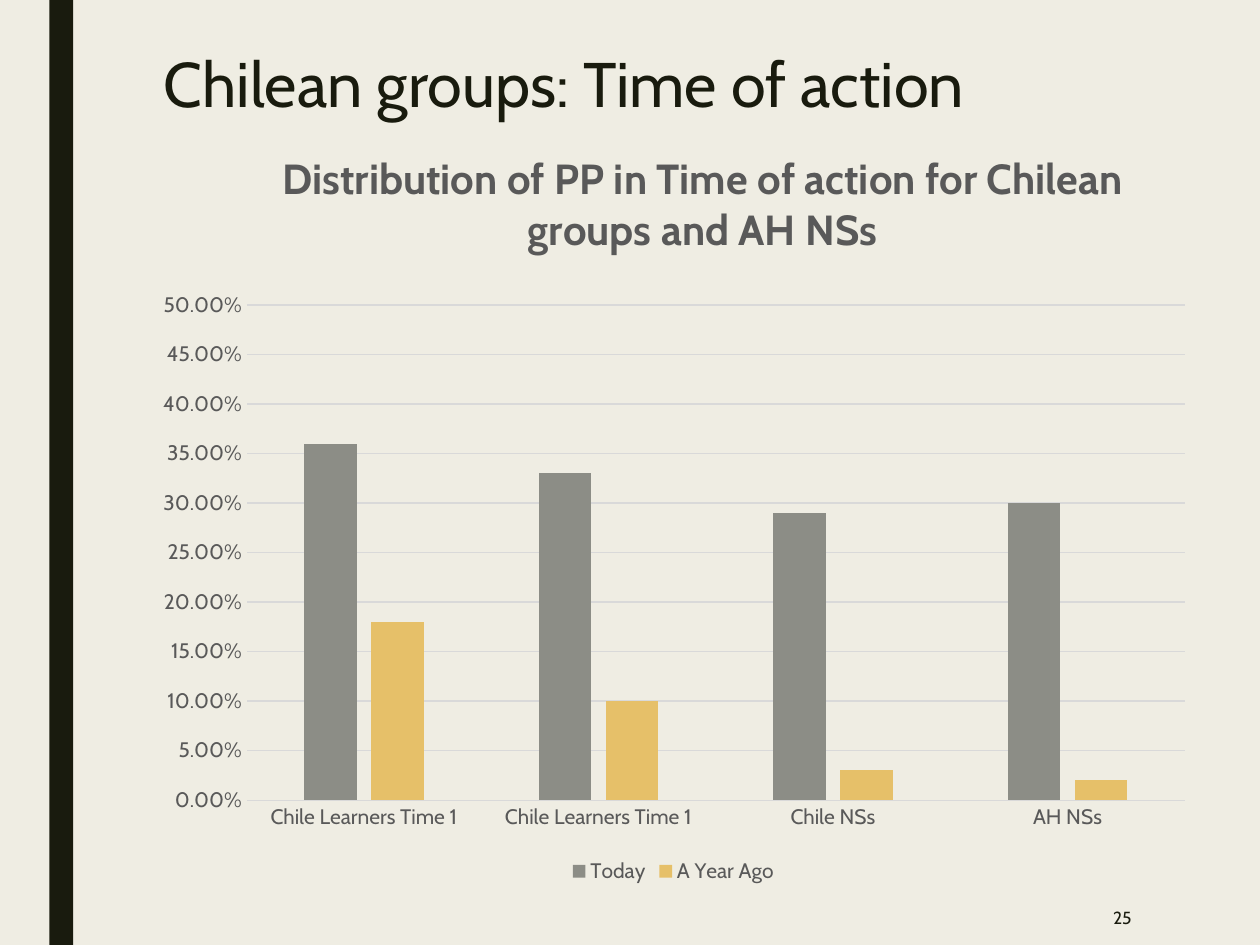
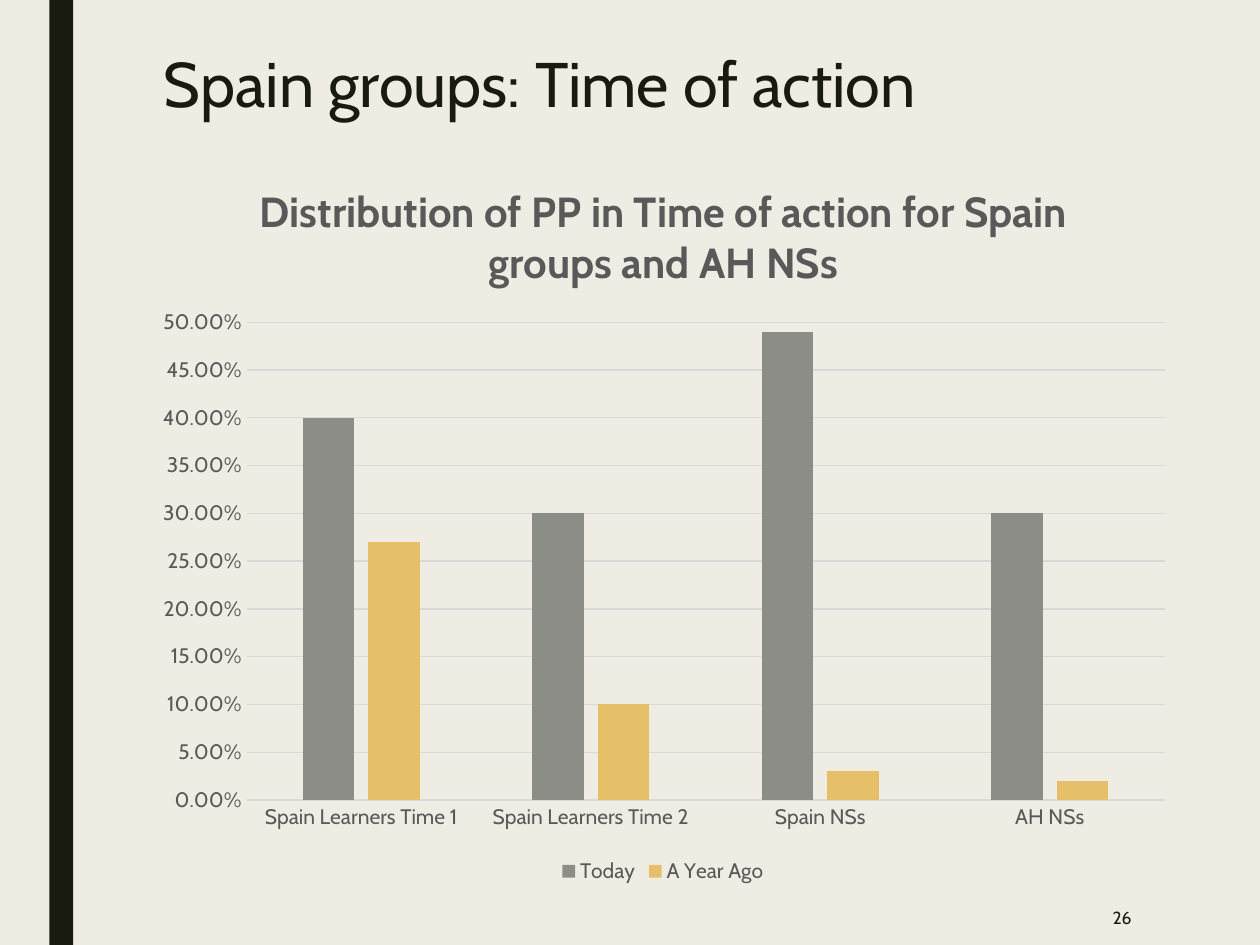
from dataclasses import dataclass

from pptx import Presentation
from pptx import util as u
from pptx.chart import data as cd
from pptx.dml import color as col
from pptx.enum import chart as ec
from pptx.enum import shapes, text
from pptx.oxml import parse_xml
from pptx.oxml import ns

Pt = u.Pt


@dataclass(frozen=True)
class Theme:
    font: str = "Cabin"
    paper: str = "EFEDE3"
    ink: str = "191B0E"
    muted: str = "595959"
    grid: str = "D9D9D9"
    series: tuple = ("8C8D86", "E6C069")
    title: int = 36
    chart_title: int = 24
    label: int = 12
    number: int = 10


T = Theme()
SERIES = ("Today", "A Year Ago")

SLIDES = (
    dict(
        group="Chilean", number=25,
        box=(75.6, 80.6, 618.4, 427.3),
        plot=(141, 174.3, 536, 283),
        heading=(157, 77),
        cats=("Chile Learners Time 1", "Chile Learners Time 1", "Chile NSs", "AH NSs"),
        values=((0.36, 0.33, 0.29, 0.3), (0.18, 0.1, 0.03, 0.02)),
    ),
    dict(
        group="Spain", number=26,
        box=(80.8, 90.7, 596.2, 417.2),
        plot=(140.9, 184.2, 524.6, 273),
        heading=(144, 99.5),
        cats=("Spain Learners Time 1", "Spain Learners Time 2", "Spain NSs", "AH NSs"),
        values=((0.4, 0.3, 0.49, 0.3), (0.27, 0.1, 0.03, 0.02)),
    ),
)


def rgb(value):
    return col.RGBColor.from_string(value)


def style_font(font, size, color, bold=False):
    font.name = T.font
    font.size = Pt(size)
    font.bold = bold
    font.color.rgb = rgb(color)


def add_text(s, box, words, size, align, anchor, spacing=None):
    tf = s.shapes.add_textbox(*map(Pt, box)).text_frame
    tf.word_wrap = True
    tf.vertical_anchor = anchor
    p = tf.paragraphs[0]
    p.alignment = align
    p.line_spacing = spacing
    r = p.add_run()
    r.text = words
    style_font(r.font, size, T.ink)


def add_band(s, height):
    sp = s.shapes.add_shape(shapes.MSO_SHAPE.RECTANGLE, Pt(28.3), 0, Pt(13.5), height)
    sp.shadow.inherit = False
    sp.fill.solid()
    sp.fill.fore_color.rgb = rgb(T.ink)
    sp.line.fill.background()


def manual_layout(box, area, inner=False):
    left, top, width, height = box
    x, y, *size = area
    parts = [("x", (x - left) / width), ("y", (y - top) / height)]
    parts += zip("wh", (size[0] / width, size[1] / height) if size else ())
    modes = '<c:layoutTarget val="inner"/>' if inner else ""
    modes += '<c:xMode val="edge"/><c:yMode val="edge"/>'
    values = "".join(f'<c:{k} val="{v:.4f}"/>' for k, v in parts)
    return parse_xml(
        f'<c:layout {ns.nsdecls("c")}><c:manualLayout>{modes}{values}'
        "</c:manualLayout></c:layout>"
    )


def place_parts(chart, box, plot, heading):
    root = chart.element
    area = root.find(".//" + ns.qn("c:plotArea"))
    title = root.find(".//" + ns.qn("c:title"))
    for parent in (area, title):
        for old in parent.findall(ns.qn("c:layout")):
            parent.remove(old)
    area.insert(0, manual_layout(box, plot, inner=True))
    title.find(ns.qn("c:tx")).addnext(manual_layout(box, heading))


def style_axes(chart):
    for axis in (chart.category_axis, chart.value_axis):
        axis.major_tick_mark = axis.minor_tick_mark = ec.XL_TICK_MARK.NONE
        style_font(axis.tick_labels.font, T.label, T.muted)
    value = chart.value_axis
    value.minimum_scale, value.maximum_scale, value.major_unit = 0, 0.5, 0.05
    value.tick_labels.number_format = "0.00%"
    value.tick_labels.number_format_is_linked = False
    value.format.line.fill.background()
    for line in (chart.category_axis.format.line, value.major_gridlines.format.line):
        line.color.rgb = rgb(T.grid)
        line.width = Pt(0.75)


def add_column_chart(s, box, plot, heading, title, cats, values):
    data = cd.CategoryChartData(number_format="0.00%")
    data.categories = cats
    for name, vals in zip(SERIES, values):
        data.add_series(name, vals)
    kind = ec.XL_CHART_TYPE.COLUMN_CLUSTERED
    chart = s.shapes.add_chart(kind, *map(Pt, box), data).chart
    style_font(chart.font, T.number, T.muted)

    chart.has_title = True
    r = chart.chart_title.text_frame.paragraphs[0].add_run()
    r.text = title
    style_font(r.font, T.chart_title, T.muted, bold=True)
    chart.chart_title.include_in_layout = False

    chart.has_legend = True
    chart.legend.position = ec.XL_LEGEND_POSITION.BOTTOM
    chart.legend.include_in_layout = False
    style_font(chart.legend.font, T.label, T.muted)

    bars = chart.plots[0]
    bars.vary_by_categories = False
    bars.gap_width, bars.overlap = 219, -27
    for series, color in zip(bars.series, T.series):
        series.format.fill.solid()
        series.format.fill.fore_color.rgb = rgb(color)
    style_axes(chart)
    place_parts(chart, box, plot, heading)


def add_slide(prs, group, number, **chart):
    s = prs.slides.add_slide(prs.slide_layouts[6])
    s.background.fill.solid()
    s.background.fill.fore_color.rgb = rgb(T.paper)
    add_band(s, prs.slide_height)
    add_text(s, (86.6, 27.4, 567.4, 53.3), f"{group} groups: Time of action", T.title,
             text.PP_ALIGN.LEFT, text.MSO_ANCHOR.TOP, 0.89)
    add_column_chart(
        s, title=f"Distribution of PP in Time of action for {group} groups and AH NSs",
        **chart)
    add_text(s, (559.4, 508.3, 94.3, 31.7), str(number), T.number,
             text.PP_ALIGN.RIGHT, text.MSO_ANCHOR.MIDDLE)


def main():
    prs = Presentation()
    prs.slide_width, prs.slide_height = Pt(720), Pt(540)
    for content in SLIDES:
        add_slide(prs, **content)
    prs.save("out.pptx")


main()
